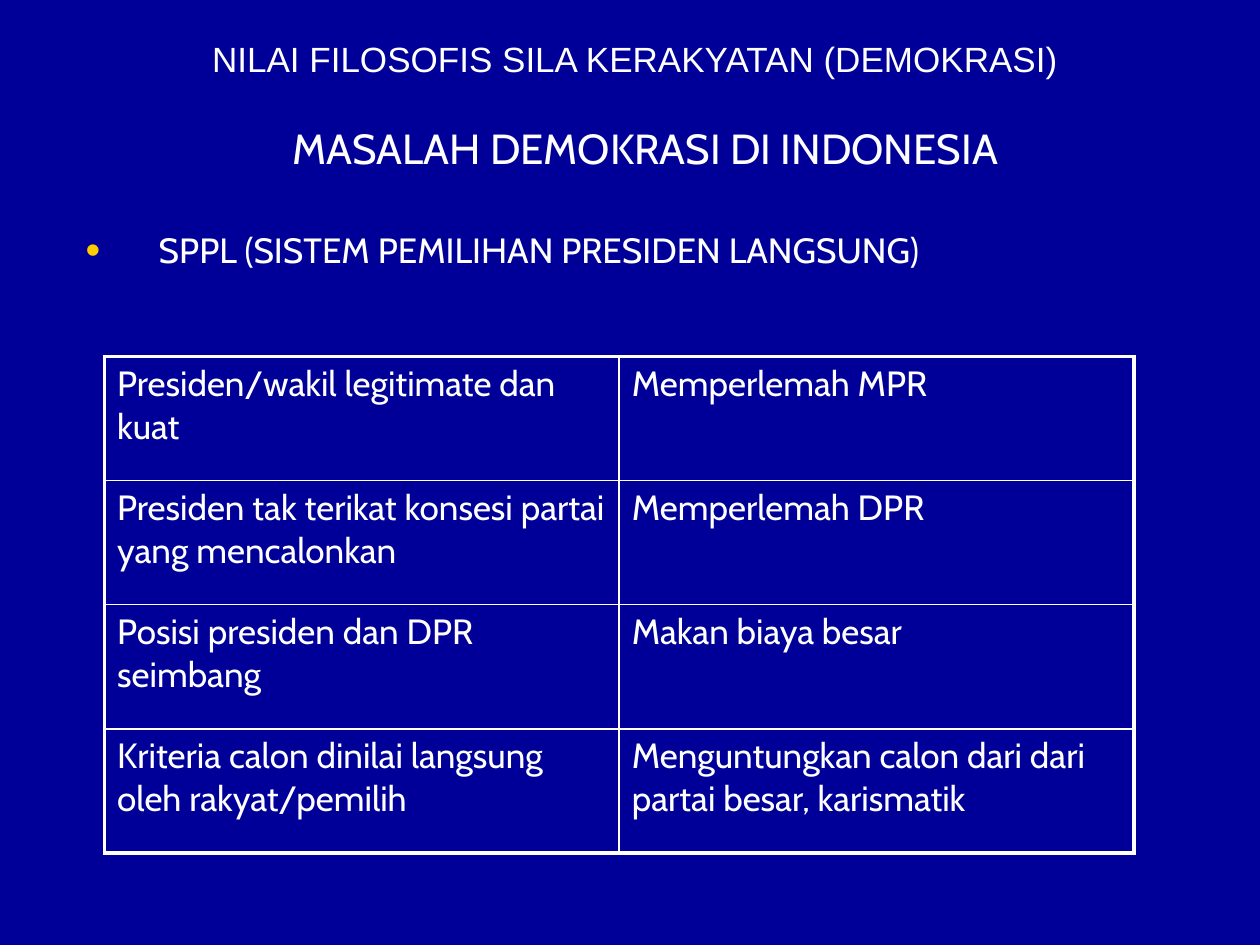
from lxml.etree import SubElement
from pptx import Presentation
from pptx.dml.color import RGBColor
from pptx.enum.text import MSO_ANCHOR, MSO_AUTO_SIZE, PP_ALIGN
from pptx.oxml.ns import qn
from pptx.util import Inches, Pt

# Content
TITLE = "NILAI FILOSOFIS SILA KERAKYATAN (DEMOKRASI)"
HEADING = "MASALAH DEMOKRASI DI INDONESIA"
BULLET = "SPPL (SISTEM PEMILIHAN PRESIDEN LANGSUNG)"
ROWS = [
    ("Presiden/wakil legitimate dan kuat", "Memperlemah MPR"),
    ("Presiden tak terikat konsesi partai yang mencalonkan", "Memperlemah DPR"),
    ("Posisi presiden dan DPR seimbang", "Makan biaya besar"),
    ("Kriteria calon dinilai langsung oleh rakyat/pemilih",
     "Menguntungkan calon dari dari partai besar, karismatik"),
]

THEME = {
    "background": "000099", "text": "FFFFFF", "bullet": "FFCC00",
    "title_font": "Arial", "body_font": "Cabin",
    "heading_size": 24, "text_size": 20,
    "outer_line": 2.25, "inner_line": 1,
}
HANGING = Inches(0.58)


def place(box, left, top, width, height):
    box.left, box.top = Inches(left), Inches(top)
    box.width, box.height = Inches(width), Inches(height)
    frame = box.text_frame
    frame.word_wrap = True
    frame.auto_size = MSO_AUTO_SIZE.NONE
    frame.vertical_anchor = MSO_ANCHOR.TOP
    return frame


def write(para, text, font, size, align=PP_ALIGN.LEFT, before=0):
    para.text = text
    para.alignment = align
    para.space_before = Pt(before)
    para.font.name = font
    para.font.size = Pt(size)
    para.font.color.rgb = RGBColor.from_string(THEME["text"])


def set_bullet(para, char=None):
    """Give the paragraph a hanging bullet, or none."""
    props = para._p.get_or_add_pPr()
    indent = HANGING if char else 0
    props.set("marL", str(indent))
    props.set("indent", str(-indent))
    if not char:
        SubElement(props, qn("a:buNone"))
        return
    color = SubElement(props, qn("a:buClr"))
    SubElement(color, qn("a:srgbClr"), val=THEME["bullet"])
    SubElement(props, qn("a:buSzPct"), val="120000")
    SubElement(props, qn("a:buFont"), typeface="Arial")
    SubElement(props, qn("a:buChar"), char=char)


def set_border(cell, side, width):
    line = SubElement(cell._tc.get_or_add_tcPr(), qn(f"a:ln{side}"), w=str(Pt(width)))
    fill = SubElement(line, qn("a:solidFill"))
    SubElement(fill, qn("a:srgbClr"), val=THEME["text"])


# Page
deck = Presentation()
deck.slide_width, deck.slide_height = Inches(10), Inches(7.5)
page = deck.slides.add_slide(deck.slide_layouts[1])
page.background.fill.solid()
page.background.fill.fore_color.rgb = RGBColor.from_string(THEME["background"])

# Title
title = place(page.shapes.title, 0.5, 0.25, 9.08, 0.43)
write(title.paragraphs[0], TITLE, THEME["title_font"], THEME["text_size"], PP_ALIGN.CENTER)

# Heading and bullet
body = place(page.placeholders[1], 0.58, 0.92, 9.08, 6.08)
heading, point = body.paragraphs[0], body.add_paragraph()
set_bullet(heading)
write(heading, HEADING, THEME["body_font"], THEME["heading_size"], PP_ALIGN.CENTER)
set_bullet(point, "•")
write(point, BULLET, THEME["body_font"], THEME["text_size"], before=32)

# Table: heavy frame, thin inner rules
last_row, last_column = len(ROWS) - 1, len(ROWS[0]) - 1
table = page.shapes.add_table(len(ROWS), len(ROWS[0]), Inches(0.83), Inches(2.83),
                              Inches(8.17), Inches(3.94)).table
table.first_row = table.horz_banding = False
for r, row in enumerate(ROWS):
    for c, text in enumerate(row):
        cell = table.cell(r, c)
        write(cell.text_frame.paragraphs[0], text, THEME["body_font"], THEME["text_size"])
        outer = {"L": c == 0, "R": c == last_column, "T": r == 0, "B": r == last_row}
        for side, is_outer in outer.items():
            set_border(cell, side, THEME["outer_line" if is_outer else "inner_line"])
        cell.fill.background()

deck.save("out.pptx")
